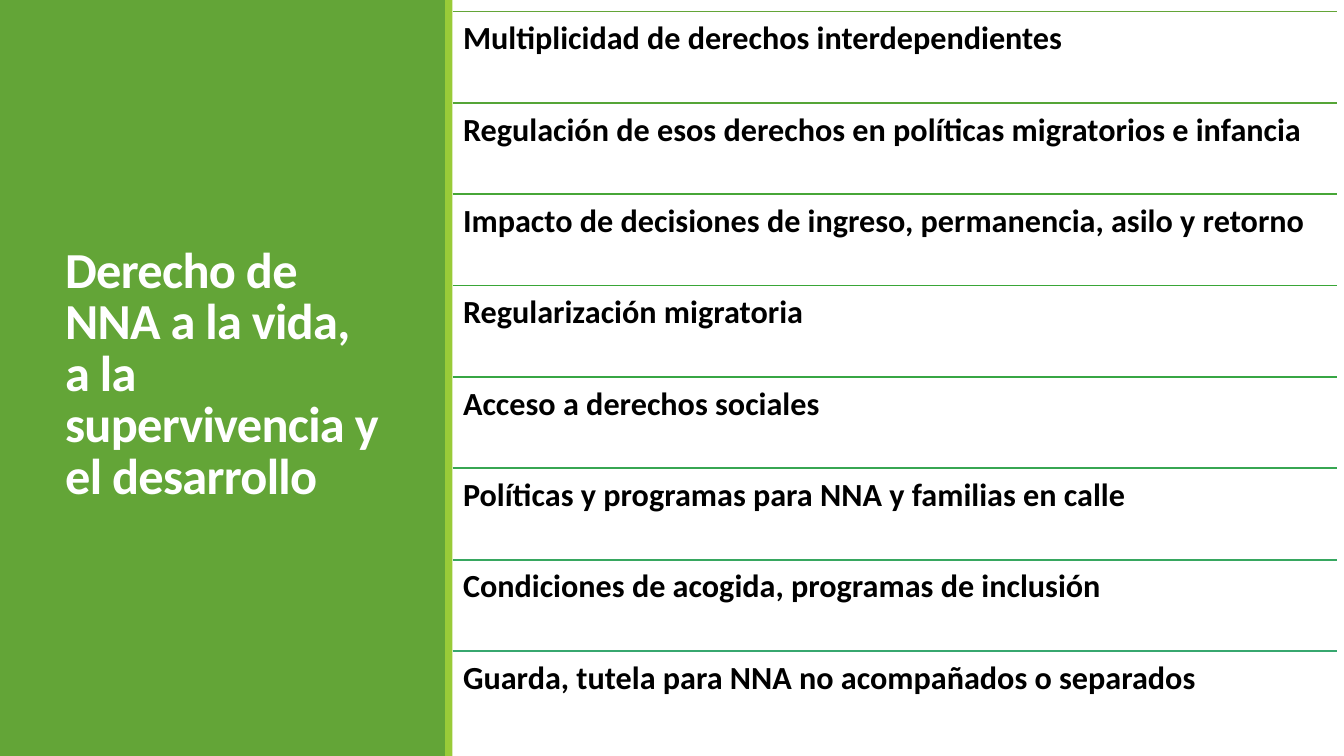
from lxml import etree
from pptx import Presentation
from pptx.dml.color import RGBColor
from pptx.enum.shapes import MSO_CONNECTOR, MSO_SHAPE
from pptx.enum.text import MSO_ANCHOR, MSO_AUTO_SIZE, PP_ALIGN
from pptx.oxml.ns import qn
from pptx.util import Pt

RECTANGLE, STRAIGHT = MSO_SHAPE.RECTANGLE, MSO_CONNECTOR.STRAIGHT
TOP, MIDDLE = MSO_ANCHOR.TOP, MSO_ANCHOR.MIDDLE
LEFT, NO_AUTOSIZE = PP_ALIGN.LEFT, MSO_AUTO_SIZE.NONE

TITLE = "Derecho de NNA a la vida, a la supervivencia y el desarrollo"
TOPICS = [  # rule colour, text
    ("63A537", "Multiplicidad de derechos interdependientes"),
    ("55A537", "Regulación de esos derechos en políticas migratorios e infancia"),
    ("47A637", "Impacto de decisiones de ingreso, permanencia, asilo y retorno"),
    ("39A637", "Regularización migratoria"),
    ("37A644", "Acceso a derechos sociales"),
    ("37A652", "Políticas y programas para NNA y familias en calle"),
    ("37A760", "Condiciones de acogida, programas de inclusión"),
    ("37A76F", "Guarda, tutela para NNA no acompañados o separados"),
]
PANELS = [  # left, width, colour
    (0, 425, "63A537"),
    (424, 7, "99CB38"),
]
WIDTH, HEIGHT = 1280, 720
TITLE_BOX = (52, 55, 324, 606)
LIST_LEFT, LIST_TOP, LIST_WIDTH, ROW_HEIGHT = 431, 11, 842, 87
INSET = 10


def px(n):
    return n * 9525


def rgb(value):
    return RGBColor.from_string(value)


def write(shape, text, size, color, line_spacing, anchor):
    tf = shape.text_frame
    tf.text = text
    frame = {"word_wrap": True, "auto_size": NO_AUTOSIZE, "vertical_anchor": anchor}
    for side in ("left", "top", "right", "bottom"):
        frame["margin_" + side] = px(INSET)
    for name, value in frame.items():
        setattr(tf, name, value)
    p = tf.paragraphs[0]
    p.alignment, p.line_spacing = LEFT, line_spacing
    r = p.runs[0]
    for name, value in {"name": "Calibri", "size": Pt(size), "bold": True}.items():
        setattr(r.font, name, value)
    r.font.color.rgb = rgb(color)
    return r


def add_panel(s, left, width, color):
    panel = s.shapes.add_shape(RECTANGLE, px(left), 0, px(width), px(HEIGHT))
    panel.shadow.inherit = False
    panel.fill.solid()
    panel.fill.fore_color.rgb = rgb(color)
    panel.line.fill.background()
    return panel


def add_topic(s, top, color, text):
    right = LIST_LEFT + LIST_WIDTH
    rule = s.shapes.add_connector(STRAIGHT, px(LIST_LEFT), px(top), px(right), px(top))
    rule.line.color.rgb = rgb(color)
    rule.line.width = Pt(1.25)
    etree.SubElement(rule._element.spPr, qn("a:effectLst"))
    box = s.shapes.add_textbox(px(LIST_LEFT), px(top), px(LIST_WIDTH), px(ROW_HEIGHT))
    write(box, text, 23, "000000", 0.9, TOP)


def main():
    prs = Presentation()
    prs.slide_width, prs.slide_height = px(WIDTH), px(HEIGHT)
    s = prs.slides.add_slide(prs.slide_layouts[5])

    title = s.shapes.title
    for name, value in zip(("left", "top", "width", "height"), TITLE_BOX):
        setattr(title, name, px(value))
    r = write(title, TITLE, 36, "FFFFFF", 0.85, MIDDLE)
    r.font._element.set("spc", "-50")

    for panel in PANELS:
        shape = add_panel(s, *panel)
        title._element.addprevious(shape._element)  # keep the title in front

    for i, (color, text) in enumerate(TOPICS):
        add_topic(s, LIST_TOP + i * ROW_HEIGHT, color, text)

    prs.save("out.pptx")


if __name__ == "__main__":
    main()
